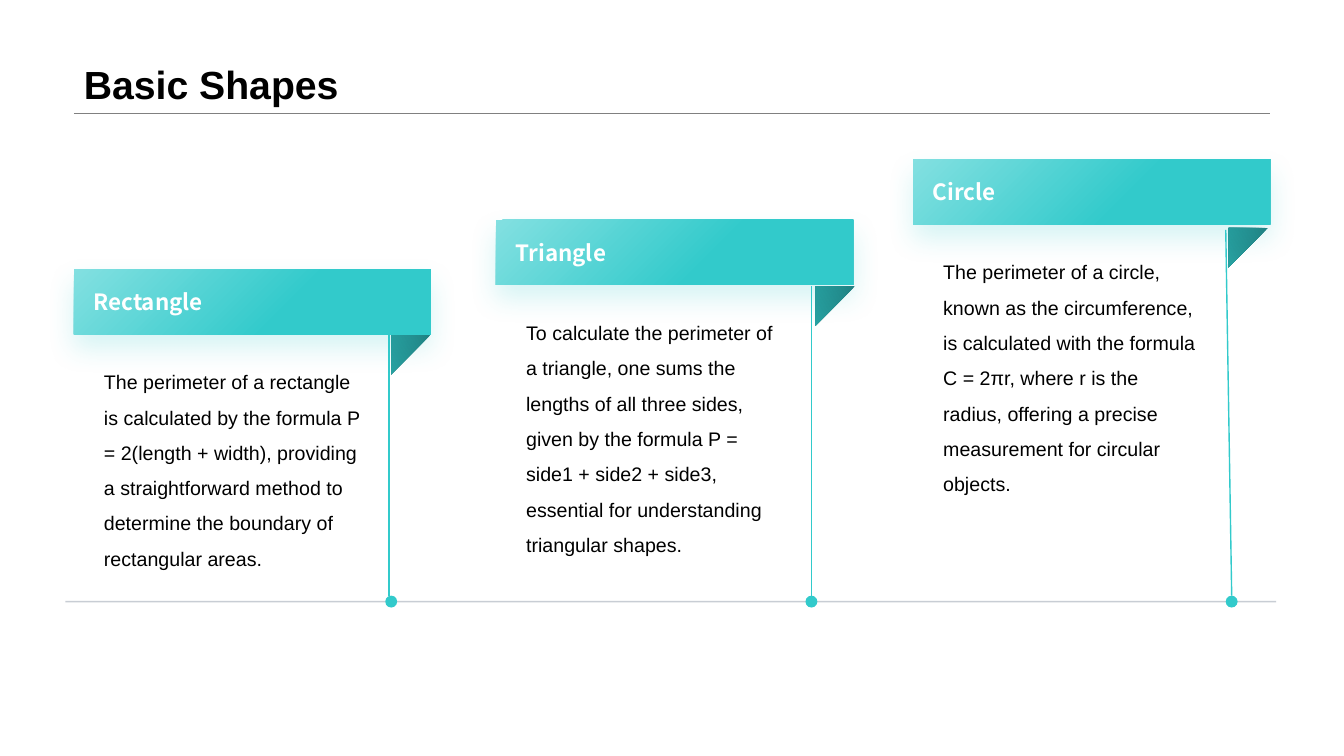
from pptx import Presentation
from pptx.dml.color import RGBColor
from pptx.enum.shapes import MSO_CONNECTOR, MSO_SHAPE
from pptx.enum.text import MSO_ANCHOR, MSO_AUTO_SIZE, PP_ALIGN
from pptx.oxml.ns import qn
from pptx.util import Cm, Pt
from lxml.etree import SubElement

COLORS = {
    "black": "000000",
    "white": "FFFFFF",
    "title_rule": "808080",
    "baseline": "768394",
    "teal": "32CACB",
    "light_teal": "83E0E1",
    "fold_dark": "1E797A",
    "fold_light": "28A2A2",
}
BASELINE_Y = 15.16
DOT_SIZE = 0.3

CARDS = [
    {
        "heading": "Rectangle",
        "text": "The perimeter of a rectangle is calculated by the formula P = 2(length + width), "
                "providing a straightforward method to determine the boundary of rectangular areas.",
        "banner": (1.86, 6.78), "fold": (9.86, 8.43),
        "stem": (9.8, 8.43, 9.8), "dot_x": 9.86,
    },
    {
        "heading": "Triangle",
        "text": "To calculate the perimeter of a triangle, one sums the lengths of all three sides, "
                "given by the formula P = side1 + side2 + side3, essential for understanding "
                "triangular shapes.",
        "banner": (12.5, 5.54), "fold": (20.55, 7.21),
        "stem": (20.45, 7.21, 20.45), "dot_x": 20.45,
    },
    {
        "heading": "Circle",
        "text": "The perimeter of a circle, known as the circumference, is calculated with the "
                "formula C = 2πr, where r is the radius, offering a precise measurement for "
                "circular objects.",
        "banner": (23.01, 4.01), "fold": (30.96, 5.74),
        "stem": (30.89, 5.79, 31.04), "dot_x": 31.04,
    },
]


def add_rule(start_x, start_y, end_x, end_y, color, width):
    rule = page.shapes.add_connector(
        MSO_CONNECTOR.STRAIGHT, Cm(start_x), Cm(start_y), Cm(end_x), Cm(end_y))
    rule.line.color.rgb = RGBColor.from_string(COLORS[color])
    rule.line.width = Pt(width)
    SubElement(rule._element.spPr, qn("a:effectLst"))
    return rule


def add_gradient_shape(kind, left, top, width, height, stops, angle):
    shape = page.shapes.add_shape(kind, Cm(left), Cm(top), Cm(width), Cm(height))
    shape.shadow.inherit = False
    shape.line.fill.background()
    shape.fill.gradient()
    shape.fill.gradient_angle = 360 - angle
    for stop, (position, color) in zip(shape.fill.gradient_stops, stops):
        stop.position = position
        stop.color.rgb = RGBColor.from_string(COLORS[color])
    return shape


deck = Presentation()
deck.slide_width = Cm(33.87)
deck.slide_height = Cm(19.05)
page = deck.slides.add_slide(deck.slide_layouts[5])

title = page.shapes.title
title.left, title.top, title.width, title.height = Cm(1.86), Cm(0), Cm(30.14), Cm(2.85)
title.text_frame.text = "Basic Shapes"
title.text_frame.auto_size = MSO_AUTO_SIZE.NONE
title.text_frame.vertical_anchor = MSO_ANCHOR.BOTTOM
para = title.text_frame.paragraphs[0]
para.alignment = PP_ALIGN.LEFT
para.line_spacing = 0.9
span = para.runs[0]
span.font.name = "Arial"
span.font.size = Pt(28)
span.font.bold = True
span.font.color.rgb = RGBColor.from_string(COLORS["black"])

add_rule(1.86, 2.85, 32, 2.85, "title_rule", 0.25)
baseline = add_rule(1.65, BASELINE_Y, 32.16, BASELINE_Y, "baseline", 1)
baseline_color = baseline._element.spPr.find(".//" + qn("a:srgbClr"))
SubElement(baseline_color, qn("a:alpha"), val="40000")

for card in CARDS:
    fold = add_gradient_shape(MSO_SHAPE.RIGHT_TRIANGLE, *card["fold"], 1, 1,
                              [(0, "fold_dark"), (1, "fold_light")], 60)
    fold.rotation = 90

    stem_x, stem_top, stem_end = card["stem"]
    add_rule(stem_x, stem_top, stem_end, BASELINE_Y - DOT_SIZE / 2, "teal", 1)

    dot = page.shapes.add_shape(
        MSO_SHAPE.OVAL, Cm(card["dot_x"] - DOT_SIZE / 2), Cm(BASELINE_Y - DOT_SIZE / 2),
        Cm(DOT_SIZE), Cm(DOT_SIZE))
    dot.shadow.inherit = False
    dot.fill.solid()
    dot.fill.fore_color.rgb = RGBColor.from_string(COLORS["teal"])
    dot.line.fill.background()

    left, top = card["banner"]
    banner = add_gradient_shape(MSO_SHAPE.RECTANGLE, left, top, 9, 1.64,
                                [(0, "light_teal"), (0.6, "teal")], 45)
    effects = banner._element.spPr.find(qn("a:effectLst"))
    glow = SubElement(effects, qn("a:outerShdw"), blurRad=str(Pt(20)), dist=str(Pt(10)),
                      dir="5400000", algn="t", rotWithShape="0")
    glow_color = SubElement(glow, qn("a:srgbClr"), val=COLORS["teal"])
    SubElement(glow_color, qn("a:alpha"), val="20000")
    frame = banner.text_frame
    frame.text = card["heading"]
    frame.margin_left = frame.margin_right = Cm(0.5)
    frame.vertical_anchor = MSO_ANCHOR.MIDDLE
    para = frame.paragraphs[0]
    para.alignment = PP_ALIGN.LEFT
    span = para.runs[0]
    span.font.name = "Noto Sans CJK SC"
    span.font.size = Pt(16)
    span.font.bold = True
    span.font.color.rgb = RGBColor.from_string(COLORS["white"])

    box = page.shapes.add_textbox(Cm(left + 0.51), Cm(top + 2.13), Cm(7.01), Cm(3.73))
    box.text_frame.word_wrap = True
    box.text_frame.auto_size = MSO_AUTO_SIZE.SHAPE_TO_FIT_TEXT
    box.text_frame.text = card["text"]
    para = box.text_frame.paragraphs[0]
    para.line_spacing = 1.5
    span = para.runs[0]
    span.font.name = "Arial"
    span.font.size = Pt(14)
    span.font.color.rgb = RGBColor.from_string(COLORS["black"])

deck.save("out.pptx")
